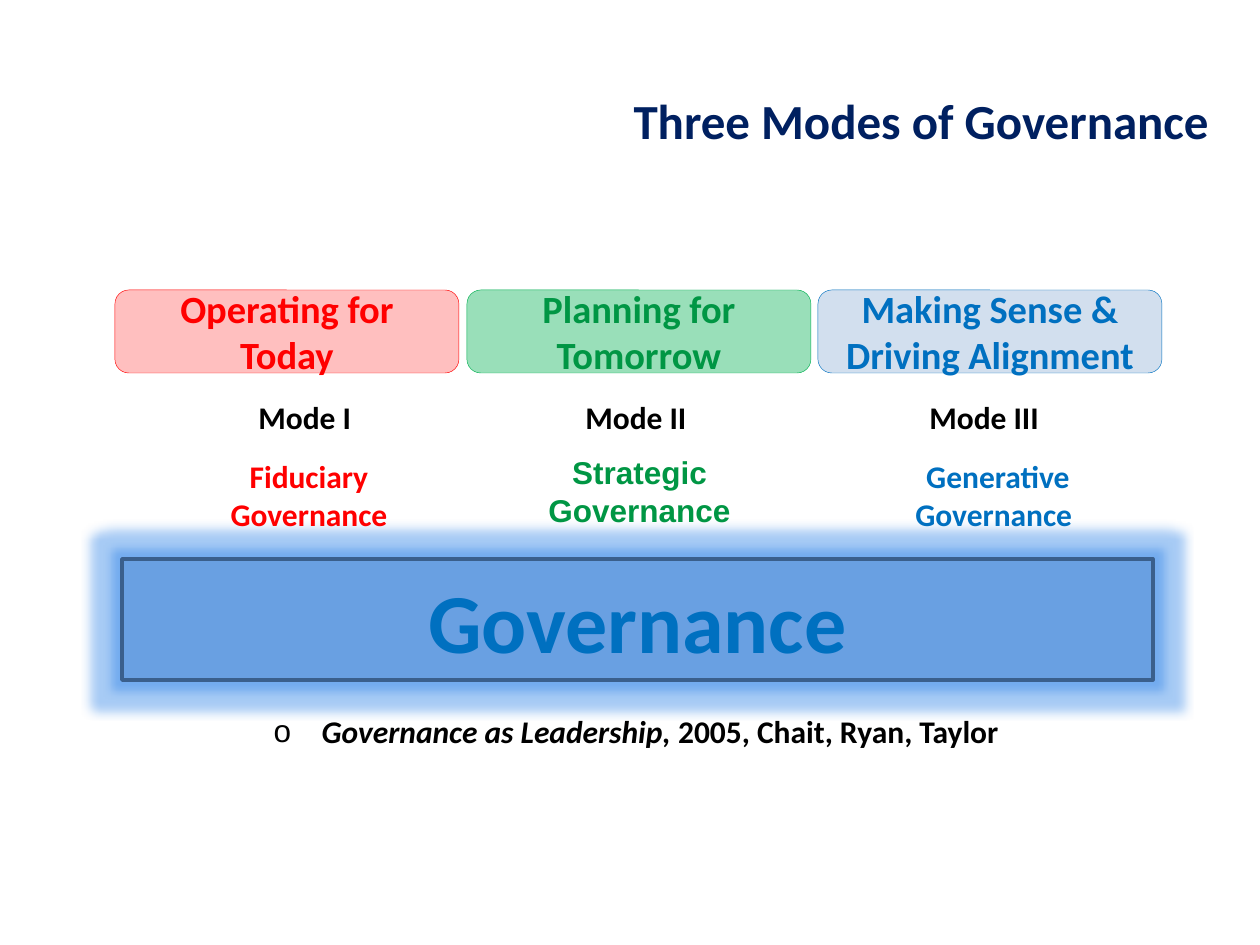
"""Build the slide on three modes of governance."""
import pptx
import pptx.util
import pptx.dml.color
import pptx.enum.shapes
import pptx.enum.text
import pptx.oxml
import pptx.oxml.ns
from lxml import etree

PX = 914400 // 126
SHAPE = pptx.enum.shapes.MSO_SHAPE
ALIGN = pptx.enum.text.PP_ALIGN
ANCHOR = pptx.enum.text.MSO_ANCHOR
FIT = pptx.enum.text.MSO_AUTO_SIZE
LEFT, CENTER = ALIGN.LEFT, ALIGN.CENTER

TITLE = "Three Modes of Governance"
BANNER = "Governance"
CITATION = [("Governance as Leadership, ", True), ("2005, Chait, Ryan, Taylor", False)]
MODES = [
    {"x": 115, "head": "Operating for Today", "fill": "FF0000", "alpha": 25,
     "line": "FF0000", "color": "FF0000", "font": "Calibri",
     "mode": "Mode I", "mode_box": (246, 392, 118, 50),
     "kind": [("Fiduciary", CENTER), ("Governance", CENTER)],
     "kind_box": (217, 451, 184, 89)},
    {"x": 467, "head": "Planning for Tomorrow", "fill": "00B050", "alpha": 40,
     "line": "00B050", "color": "009644", "font": "Arial",
     "mode": "Mode II", "mode_box": (573, 392, 127, 50),
     "kind": [("Strategic", CENTER), ("Governance", CENTER)],
     "kind_box": (535, 447, 209, 89)},
    {"x": 818, "head": "Making Sense & Driving Alignment", "fill": "4F81BD", "alpha": 25,
     "line": "0070C0", "color": "0070C0", "font": "Calibri",
     "mode": "Mode III", "mode_box": (917, 392, 136, 50),
     "kind": [("Generative", CENTER), ("Governance", LEFT)],
     "kind_box": (903, 451, 190, 89)},
]


def rgb(value):
    return pptx.dml.color.RGBColor.from_string(value)


def emu(*lengths):
    return [n * PX for n in lengths]


def add_run(p, text, size, color, font="Calibri", italic=False):
    r = p.add_run()
    r.text = text
    r.font.name, r.font.size = font, pptx.util.Pt(size)
    r.font.bold, r.font.italic = True, italic
    r.font.color.rgb = rgb(color)


def add_panel(shapes, kind, box, fill, alpha, line, width, text, size, color):
    sp = shapes.add_shape(kind, *emu(*box))
    sp.shadow.inherit = False
    sp.fill.solid()
    sp.fill.fore_color.rgb = rgb(fill)
    srgb = sp.fill._xPr.find(".//" + pptx.oxml.ns.qn("a:srgbClr"))
    etree.SubElement(srgb, pptx.oxml.ns.qn("a:alpha"), val=str(alpha * 1000))
    sp.line.color.rgb = rgb(line)
    sp.line.width = pptx.util.Pt(width)
    tf = sp.text_frame
    tf.word_wrap = True
    tf.vertical_anchor = ANCHOR.MIDDLE
    p = tf.paragraphs[0]
    p.alignment = CENTER
    add_run(p, text, size, color)
    return sp


def add_label(shapes, box, lines, color, font):
    tf = shapes.add_textbox(*emu(*box)).text_frame
    tf.word_wrap = False
    tf.auto_size = FIT.SHAPE_TO_FIT_TEXT
    for i, (text, align) in enumerate(lines):
        p = tf.add_paragraph() if i else tf.paragraphs[0]
        p.alignment = align
        add_run(p, text, 18, color, font)


def set_placeholder(sp, box, fit):
    sp.left, sp.top, sp.width, sp.height = emu(*box)
    tf = sp.text_frame
    tf.word_wrap = True
    tf.auto_size = fit
    tf.vertical_anchor = ANCHOR.TOP
    p = tf.paragraphs[0]
    p.space_before = pptx.util.Pt(0)
    return p


def add_glow(sp, color, alpha, radius):
    effects = sp._element.spPr.find(pptx.oxml.ns.qn("a:effectLst"))
    glow = etree.SubElement(effects, pptx.oxml.ns.qn("a:glow"), rad=str(pptx.util.Pt(radius)))
    srgb = etree.SubElement(glow, pptx.oxml.ns.qn("a:srgbClr"), val=color)
    etree.SubElement(srgb, pptx.oxml.ns.qn("a:alpha"), val=str(alpha * 1000))


def main():
    prs = pptx.Presentation()
    prs.slide_width, prs.slide_height = emu(1260, 945)
    s = prs.slides.add_slide(prs.slide_layouts[1])

    p = set_placeholder(s.shapes.title, (582, 84, 678, 102), FIT.NONE)
    p.alignment = CENTER
    add_run(p, TITLE, 28, "002060")

    p = set_placeholder(s.placeholders[1], (199, 706, 882, 50), FIT.SHAPE_TO_FIT_TEXT)
    p.alignment = LEFT
    pPr = p._p.get_or_add_pPr()
    pPr.set("marL", str(110 * PX))
    pPr.set("indent", str(-48 * PX))
    etree.SubElement(pPr, pptx.oxml.ns.qn("a:buFont"), typeface="Arial")
    etree.SubElement(pPr, pptx.oxml.ns.qn("a:buChar"), char="o")
    for text, italic in CITATION:
        add_run(p, text, 18, "000000", italic=italic)

    banner = add_panel(s.shapes, SHAPE.RECTANGLE, (122, 559, 1031, 121),
                       "4F81BD", 25, "3A5F8C", 2, BANNER, 48, "0070C0")
    add_glow(banner, "257DE6", 40, 11)

    for m in MODES:
        shapes = s.shapes.add_group_shape().shapes
        add_panel(shapes, SHAPE.ROUNDED_RECTANGLE, (m["x"], 290, 344, 83),
                  m["fill"], m["alpha"], m["line"], 0.25, m["head"], 22, m["color"])
        add_label(shapes, m["mode_box"], [(m["mode"], LEFT)], "000000", "Calibri")
        add_label(shapes, m["kind_box"], m["kind"], m["color"], m["font"])

    prs.save("out.pptx")


if __name__ == "__main__":
    main()
